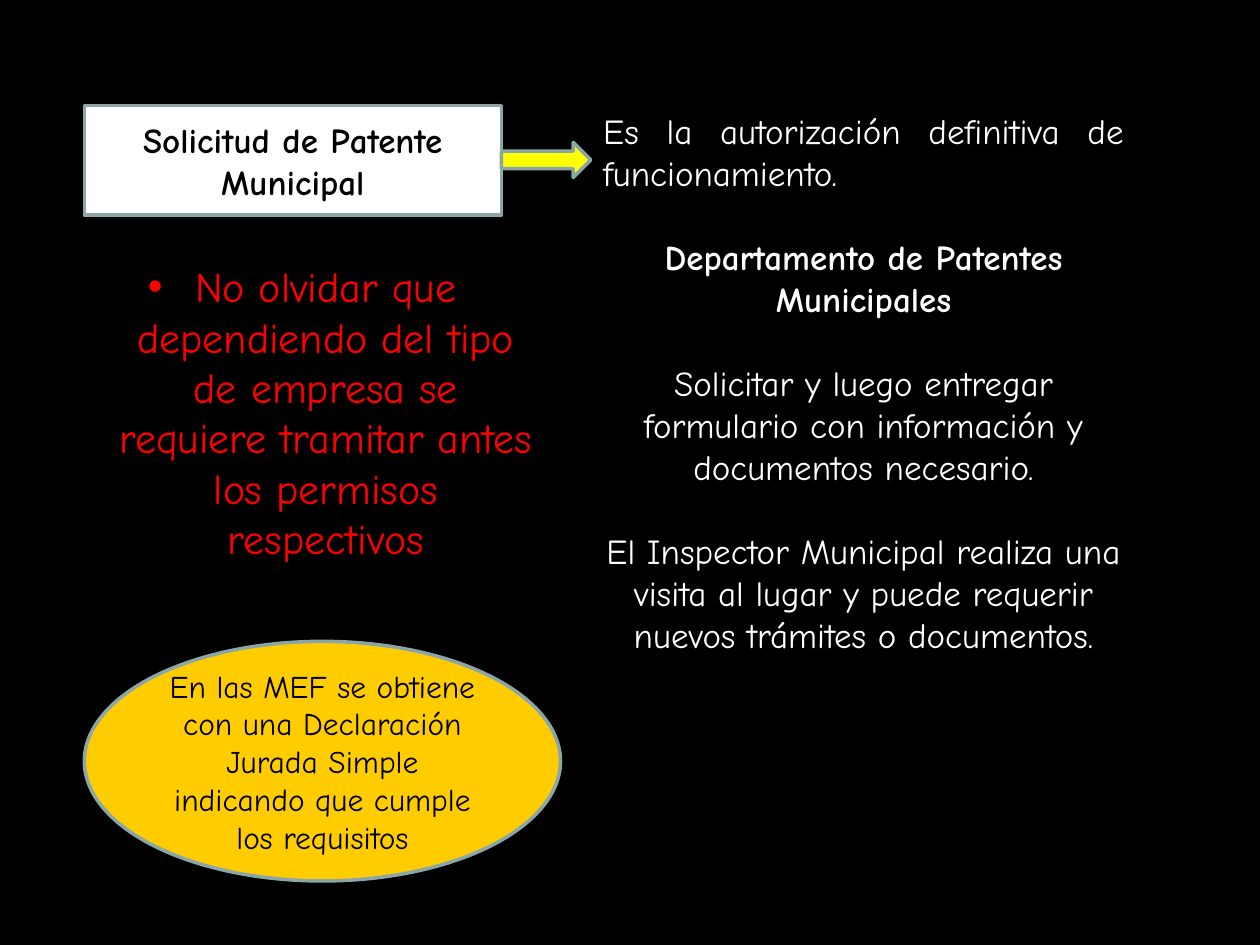
from dataclasses import dataclass

from lxml.etree import SubElement
from pptx import Presentation
from pptx.dml.color import RGBColor
from pptx.enum.shapes import MSO_SHAPE as Shape
from pptx.enum.text import MSO_ANCHOR as Anchor, MSO_AUTO_SIZE as AutoSize, PP_ALIGN as Align
from pptx.oxml.ns import qn
from pptx.util import Cm, Pt


@dataclass(frozen=True)
class Theme:
    font: str = "Comic Neue"
    black: str = "000000"
    white: str = "FFFFFF"
    warning: str = "FF0000"
    arrow: str = "FFFF00"
    note: str = "FFCC00"
    outline: str = "8AA6A8"
    outline_width: float = 2
    large: int = 24
    medium: int = 20
    small: int = 18


THEME = Theme()
rgb = RGBColor.from_string


def write(paragraph, text, size=THEME.medium, color=THEME.white, bold=False,
          align=Align.CENTER, before=0):
    """Write one formatted run into a paragraph."""
    paragraph.alignment = align
    paragraph.space_before = Pt(before)
    run = paragraph.add_run()
    run.text = text
    run.font.name = THEME.font
    run.font.size = Pt(size)
    run.font.bold = bold
    run.font.color.rgb = rgb(color)


class SlideBuilder:
    def __init__(self, prs, theme):
        self.theme = theme
        self.slide = prs.slides.add_slide(prs.slide_layouts.get_by_name("Title and Content"))
        title = self.slide.shapes.title
        title.element.getparent().remove(title.element)
        background = self.slide.background.fill
        background.solid()
        background.fore_color.rgb = rgb(theme.black)

    def shape(self, kind, left, top, width, height, fill, text=None, **style):
        """Add an outlined shape, with centred text if given."""
        shape = self.slide.shapes.add_shape(kind, Cm(left), Cm(top), Cm(width), Cm(height))
        shape.shadow.inherit = False
        shape.fill.solid()
        shape.fill.fore_color.rgb = rgb(fill)
        shape.line.color.rgb = rgb(self.theme.outline)
        shape.line.width = Pt(self.theme.outline_width)
        if text:
            frame = shape.text_frame
            frame.word_wrap = True
            frame.vertical_anchor = Anchor.MIDDLE
            write(frame.paragraphs[0], text, color=self.theme.black, **style)

    def bullet(self, left, top, width, height, text, **style):
        """Fill the body placeholder with one bulleted paragraph."""
        body = self.slide.placeholders[1]
        body.left, body.top, body.width, body.height = map(Cm, (left, top, width, height))
        frame = body.text_frame
        frame.auto_size = AutoSize.NONE
        frame.vertical_anchor = Anchor.TOP
        properties = frame.paragraphs[0]._p.get_or_add_pPr()
        properties.set("marL", str(Cm(0.95)))
        properties.set("indent", str(Cm(-0.95)))
        SubElement(properties, qn("a:buFont"), typeface="Arial")
        SubElement(properties, qn("a:buChar"), char="•")
        write(frame.paragraphs[0], text, **style)

    def text(self, left, top, width, height, entries, gap):
        """Add a text box of (text, style) entries separated by a gap."""
        box = self.slide.shapes.add_textbox(Cm(left), Cm(top), Cm(width), Cm(height))
        frame = box.text_frame
        frame.word_wrap = True
        for index, (text, style) in enumerate(entries):
            paragraph = frame.add_paragraph() if index else frame.paragraphs[0]
            write(paragraph, text, before=gap if index else 0, **style)


def main():
    prs = Presentation()
    prs.slide_width, prs.slide_height = Cm(25.4), Cm(19.05)
    builder = SlideBuilder(prs, THEME)

    left_edge, request_width, explanation_left = 1.7, 8.41, 11.91
    request_right = left_edge + request_width

    # Red reminder
    builder.bullet(1.09, 5.13, 10, 6.8,
                   "No olvidar que dependiendo del tipo de empresa se requiere "
                   "tramitar antes los permisos respectivos",
                   size=THEME.large, color=THEME.warning)

    # Request box
    builder.shape(Shape.RECTANGLE, left_edge, 2.13, request_width, 2.21, THEME.white,
                  "Solicitud de Patente Municipal", bold=True)

    # Explanation on the right
    builder.text(explanation_left, 2.08, 11, 12.22, [
        ("Es la autorización definitiva de funcionamiento.", {"align": Align.JUSTIFY}),
        ("Departamento de Patentes Municipales", {"bold": True}),
        ("Solicitar y luego entregar formulario con información y documentos necesario.", {}),
        ("El Inspector Municipal realiza una visita al lugar y puede requerir "
         "nuevos trámites o documentos.", {}),
    ], gap=24)

    # Arrow from the request to its explanation
    builder.shape(Shape.RIGHT_ARROW, request_right, 2.87,
                  explanation_left - request_right, 0.71, THEME.arrow)

    # Oval note
    builder.shape(Shape.OVAL, left_edge, 12.93, 9.6, 4.83, THEME.note,
                  "En las MEF se obtiene con una Declaración Jurada Simple "
                  "indicando que cumple los requisitos", size=THEME.small)

    prs.save("out.pptx")


if __name__ == "__main__":
    main()
